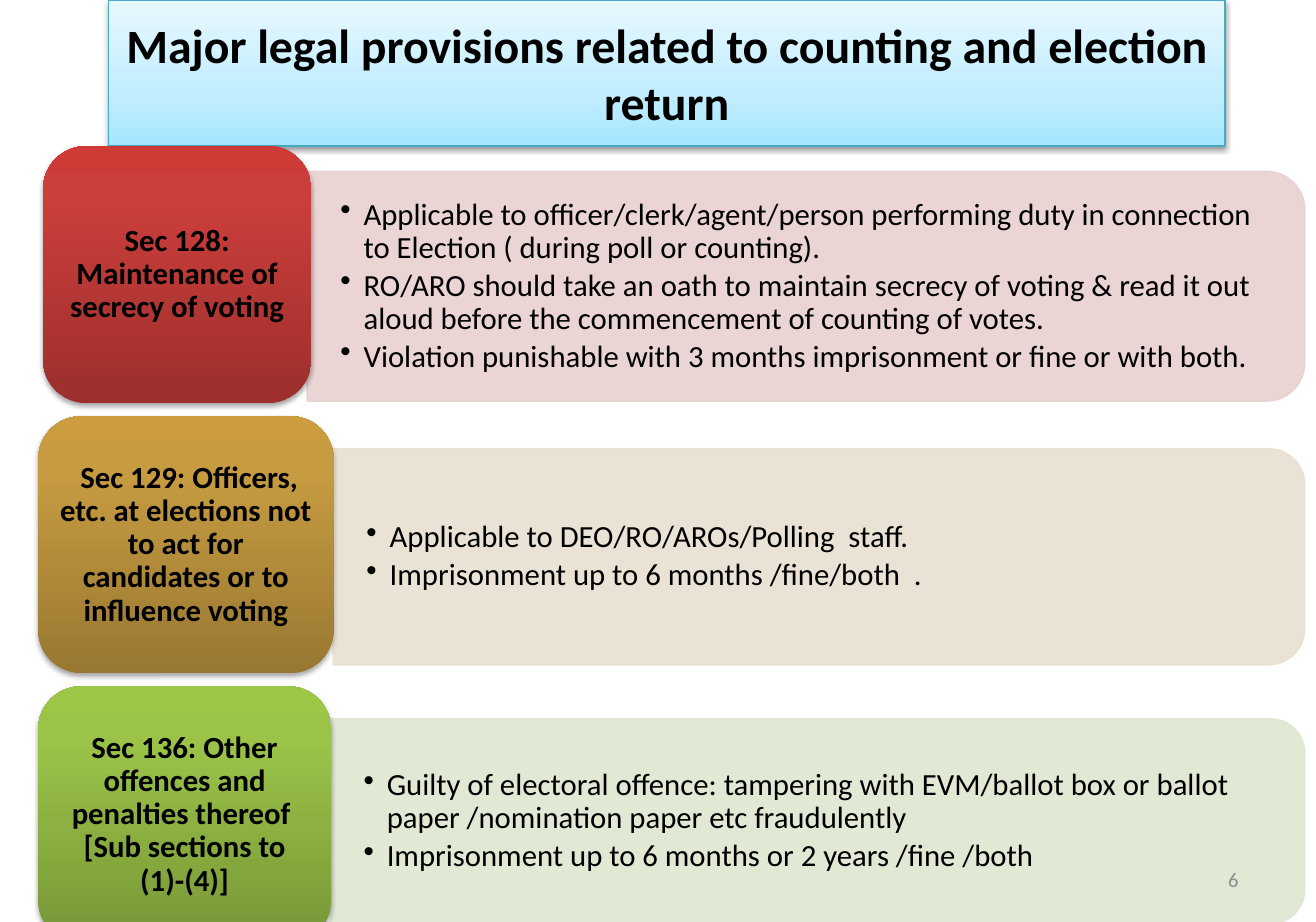
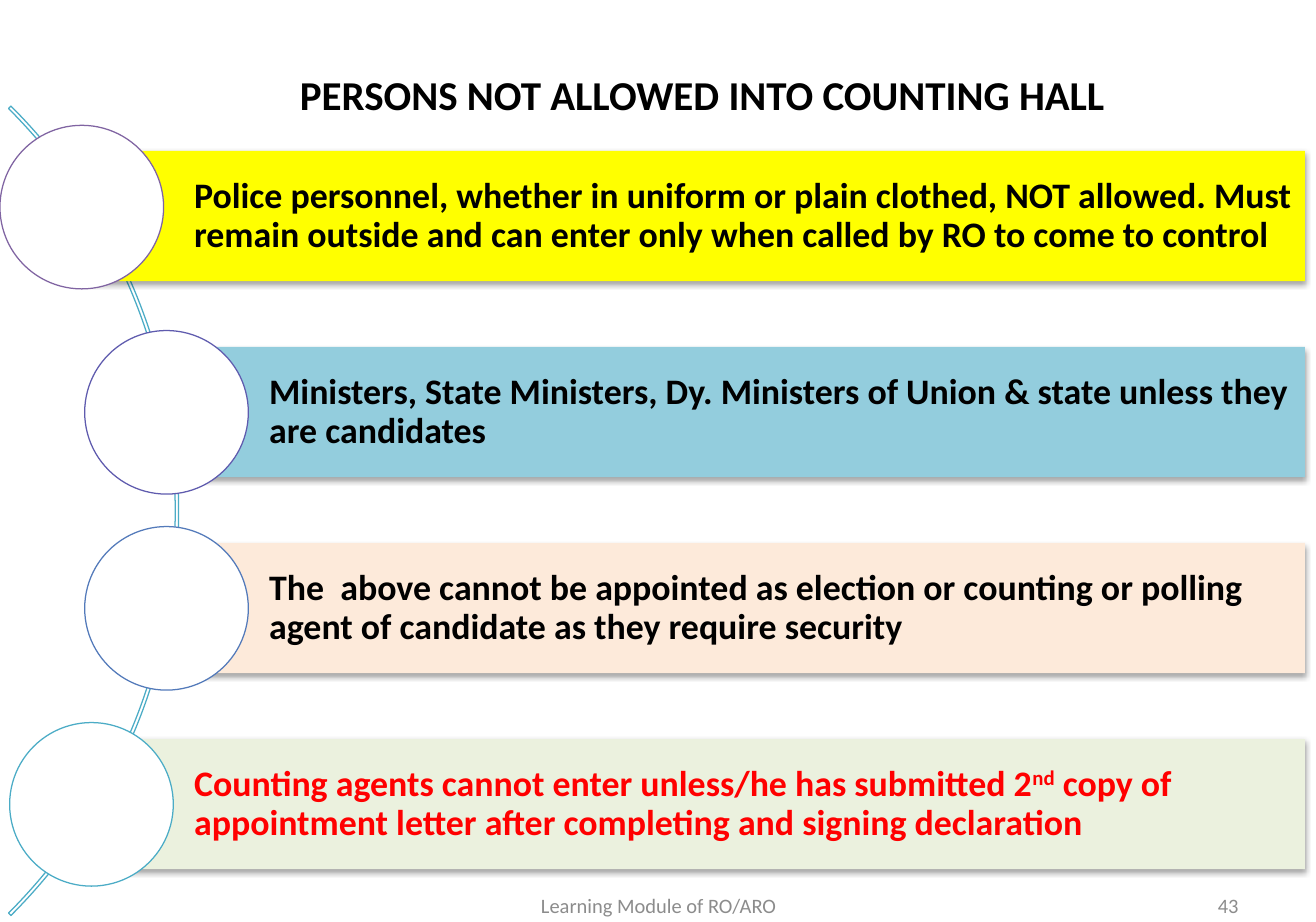
import pptx
import pptx.util
import pptx.dml.color
import pptx.enum.shapes
import pptx.enum.text
import pptx.oxml.ns
from lxml import etree

Cm, Pt = pptx.util.Cm, pptx.util.Pt
SHAPE = pptx.enum.shapes.MSO_SHAPE
ALIGN = pptx.enum.text.PP_ALIGN
MIDDLE = pptx.enum.text.MSO_ANCHOR.MIDDLE
qn = pptx.oxml.ns.qn

FONT = "Calibri"
BLACK, RED, GREY, WHITE, TEAL = "000000", "FF0000", "8C8C8C", "FFFFFF", "4BACC6"
WIDTH, HEIGHT = 27.18, 19.05
RIGHT_EDGE = 26.95

# Legal sections: label box (left, width), label gradient, panel box
# (left, top, height), panel colour, label text, bullet points
SECTIONS = [
    ((0.89, 5.54), ["9C2F2D", "CB3E3A", "CE3B37"], (6.34, 3.54, 4.75), "E8D0D0",
     "Sec 128: Maintenance of secrecy of voting",
     ["Applicable to officer/clerk/agent/person performing duty in connection "
      "to Election ( during poll or counting).",
      "RO/ARO should take an oath to maintain secrecy of voting & read it out "
      "aloud before the commencement of counting of votes.",
      "Violation punishable with 3 months imprisonment or fine or with both."]),
    ((0.79, 6.1), ["997832", "C79C41", "CB9D3F"], (6.88, 9.27, 4.47), "E8E1D1",
     " Sec 129: Officers, etc. at elections not to act for candidates or to "
     "influence voting",
     ["Applicable to DEO/RO/AROs/Polling  staff.",
      "Imprisonment up to 6 months /fine/both  ."]),
    ((0.79, 6.05), ["779737", "9BC348", "9DC746"], (6.82, 14.85, 4.24), "DEE7D1",
     "Sec 136: Other offences and penalties thereof  [Sub sections to (1)-(4)]",
     ["Guilty of electoral offence: tampering with EVM/ballot box or ballot "
      "paper /nomination paper etc fraudulently",
      "Imprisonment up to 6 months or 2 years /fine /both"]),
]

# Persons kept out: bar left, bar fill, circle (left, rise above bar),
# circle line, text colour, runs (text, superscript)
PERSONS = [
    (1.88, "FFFF00", (0, 0.53), "8064A2", BLACK,
     [("Police personnel, whether in uniform or plain clothed, NOT allowed. Must "
       "remain outside and can enter only when called by RO to come to control", False)]),
    (3.43, "93CDDD", (1.75, 0.34), "5F5BAE", BLACK,
     [("Ministers, State Ministers, Dy. Ministers of Union & state unless they "
       "are candidates", False)]),
    (3.43, "FDEADA", (1.75, 0.34), "537ABA", BLACK,
     [("The  above cannot be appointed as election or counting or polling agent "
       "of candidate as they require security", False)]),
    (1.88, "EBF1DE", (0.2, 0.34), TEAL, RED,
     [("Counting agents cannot enter unless/he has submitted 2", False),
      ("nd", True),
      (" copy of appointment letter after completing and signing declaration", False)]),
]


def rgb(value):
    return pptx.dml.color.RGBColor.from_string(value)


def lengths(box):
    return [Cm(value) for value in box]


def add_shape(page, kind, box, fill=None, line=None):
    shape = page.shapes.add_shape(kind, *lengths(box))
    shape.shadow.inherit = False
    if fill:
        shape.fill.solid()
        shape.fill.fore_color.rgb = rgb(fill)
    else:
        shape.fill.background()
    if line:
        shape.line.color.rgb = rgb(line)
        shape.line.width = Pt(0.75)
    else:
        shape.line.fill.background()
    return shape


def add_color(parent, value, opacity=None):
    color = etree.SubElement(parent, qn("a:srgbClr"), val=value)
    if opacity:
        etree.SubElement(color, qn("a:alpha"), val=str(opacity * 1000))


def set_gradient(shape, stops):
    """Run the (percent, colour) stops from the bottom to the top."""
    shape.fill.gradient()
    shape.fill.gradient_angle = 90
    stop_list = shape.element.spPr.find(".//" + qn("a:gsLst"))
    for stop in list(stop_list):
        stop_list.remove(stop)
    for percent, color in stops:
        add_color(etree.SubElement(stop_list, qn("a:gs"), pos=str(percent * 1000)), color)


def set_shadow(shape, distance=1.8, opacity=35):
    effects = shape.element.spPr.find(qn("a:effectLst"))
    shadow = etree.SubElement(effects, qn("a:outerShdw"), blurRad=str(Pt(3.1)),
                              dist=str(Pt(distance)), dir="5400000", rotWithShape="0")
    add_color(shadow, BLACK, opacity)


def set_opacity(shape, percent):
    for color in shape.element.spPr.iter(qn("a:srgbClr")):
        etree.SubElement(color, qn("a:alpha"), val=str(percent * 1000))


def write(shape, paragraphs, size, color=BLACK, bold=False, align=ALIGN.LEFT,
          spacing=0.9, insets=(0.25, 0.13, 0.25, 0.13), bullets=False):
    """Fill a shape with paragraphs, each a list of (text, superscript) runs."""
    frame = shape.text_frame
    frame.word_wrap = True
    frame.vertical_anchor = MIDDLE
    (frame.margin_left, frame.margin_top,
     frame.margin_right, frame.margin_bottom) = lengths(insets)
    for index, runs in enumerate(paragraphs):
        para = frame.add_paragraph() if index else frame.paragraphs[0]
        para.alignment = align
        para.line_spacing = spacing
        if bullets:
            para.space_after = Pt(2.7)
            props = para._p.get_or_add_pPr()
            props.set("marL", str(Cm(0.48)))
            props.set("indent", str(-Cm(0.48)))
            etree.SubElement(props, qn("a:buChar"), char="•")
        for text, superscript in runs:
            span = para.add_run()
            span.text = text
            span.font.name = FONT
            span.font.size = Pt(size)
            span.font.bold = bold
            span.font.color.rgb = rgb(color)
            if superscript:
                span._r.get_or_add_rPr().set("baseline", "30000")


def add_text(page, box, text, size, **style):
    write(page.shapes.add_textbox(*lengths(box)), [[(text, False)]], size,
          spacing=1.0, **style)


def add_footer(page, top, number, text=None):
    if text:
        add_text(page, (9.3, top, 8.61, 1.02), text, 12, color=GREY, align=ALIGN.CENTER)
    add_text(page, (19.48, top, 6.35, 1.02), number, 12, color=GREY, align=ALIGN.RIGHT)


def add_title_band(page, box, text):
    band = add_shape(page, SHAPE.RECTANGLE, box, line="46AAC5")
    set_gradient(band, [(0, "A7E6FF"), (35, "C1EDFF"), (100, "E7F8FF")])
    set_shadow(band, distance=1.6, opacity=38)
    write(band, [[(text, False)]], 28, bold=True, align=ALIGN.CENTER, spacing=1.0)


def add_panel(page, box, color, points):
    """Panel rounded on its right side, with bullet points over it."""
    left, top, width, height = box
    upright = (left + (width - height) / 2, top + (height - width) / 2, height, width)
    panel = add_shape(page, SHAPE.ROUND_2_SAME_RECTANGLE, upright, color, color)
    panel.rotation = 90
    set_opacity(panel, 90)
    points_box = page.shapes.add_textbox(*lengths((left, top, width - 0.23, height)))
    write(points_box, [[(point, False)] for point in points], 18,
          insets=(0.69, 0.36, 0.69, 0.36), bullets=True)


def add_label(page, box, colors, text):
    label = add_shape(page, SHAPE.ROUNDED_RECTANGLE, box)
    set_gradient(label, zip((0, 80, 100), colors))
    set_shadow(label)
    write(label, [[(text, False)]], 18, bold=True, align=ALIGN.CENTER,
          insets=(0.18, 0.1, 0.18, 0.1))


def add_bar(page, box, fill, color, runs):
    bar = add_shape(page, SHAPE.RECTANGLE, box, fill)
    set_shadow(bar)
    write(bar, [runs], 21, color=color, bold=True, insets=(2.13, 0.15, 0.15, 0.15))


def build_provisions(page):
    add_title_band(page, (2.24, 0, 23.06, 3.02),
                   "Major legal provisions related to counting and election return")
    for row, (label, colors, panel, color, text, points) in enumerate(SECTIONS):
        left, top, height = panel
        add_panel(page, (left, top, RIGHT_EDGE - left, height), color, points)
        add_label(page, (label[0], 3.02 + row * 5.58, label[1], 5.31), colors, text)
    add_footer(page, 17.65, "6")


def build_persons(page):
    add_footer(page, 18.19, "43", "Learning Module of RO/ARO")
    # Arc that links the circles
    arc = add_shape(page, SHAPE.BLOCK_ARC, (-19.96, -1.27, 23.65, 23.65), line=TEAL)
    for index, value in enumerate((189, 27, 0.003)):
        arc.adjustments[index] = value
    # Bars with their circles
    for row, (left, fill, circle, line, color, runs) in enumerate(PERSONS):
        top = 3.12 + row * 4.05
        add_bar(page, (left, top, RIGHT_EDGE - left, 2.69), fill, color, runs)
        add_shape(page, SHAPE.OVAL, (circle[0], top - circle[1], 3.38, 3.38), WHITE, line)
    add_text(page, (5.26, 1.3, 18.49, 1.3), "PERSONS NOT ALLOWED INTO COUNTING HALL",
             24, bold=True, align=ALIGN.CENTER)


def main():
    deck = pptx.Presentation()
    deck.slide_width, deck.slide_height = Cm(WIDTH), Cm(HEIGHT)
    for build in (build_provisions, build_persons):
        build(deck.slides.add_slide(deck.slide_layouts[6]))
    deck.save("out.pptx")


if __name__ == "__main__":
    main()
